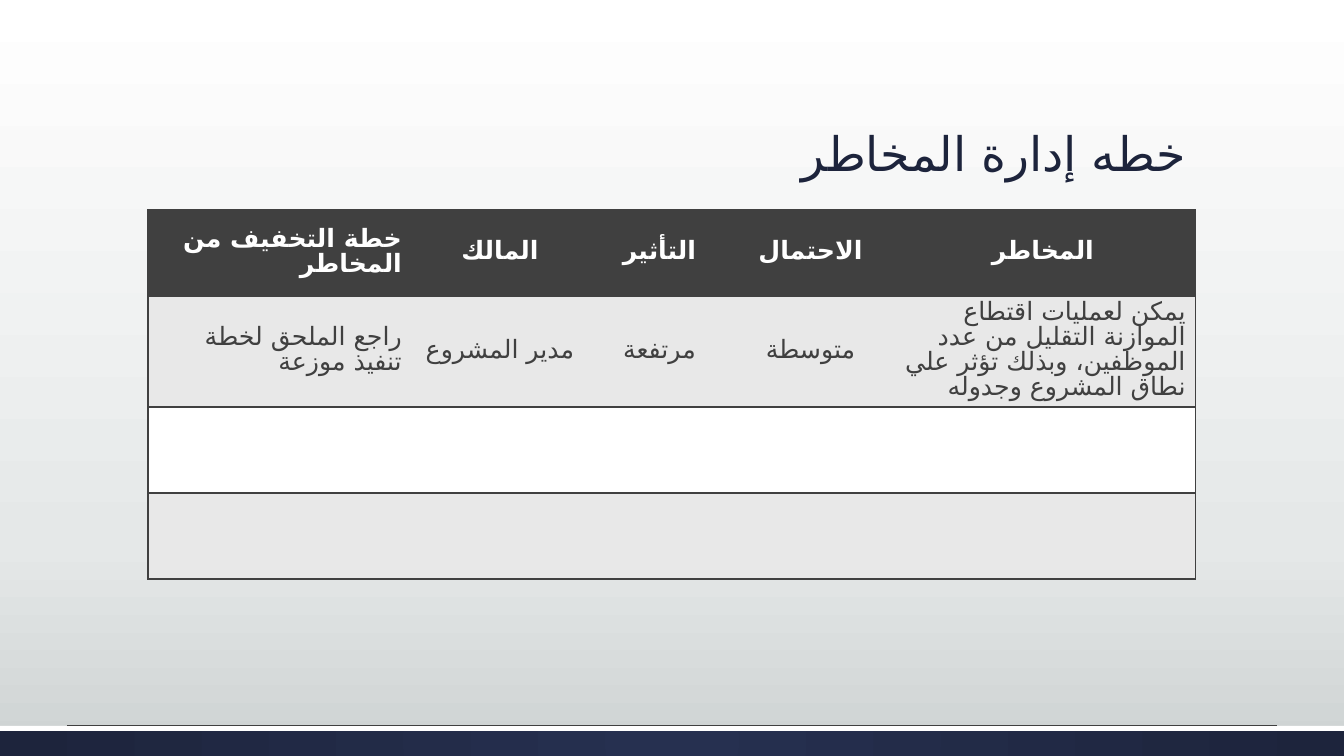
from pptx import Presentation
from pptx.dml.color import RGBColor
from pptx.enum.shapes import MSO_CONNECTOR, MSO_SHAPE
from pptx.enum.text import MSO_ANCHOR, MSO_AUTO_SIZE, PP_ALIGN
from pptx.oxml import parse_xml
from pptx.oxml.ns import nsdecls, qn
from pptx.util import Pt
from lxml.etree import SubElement

TITLE = "خطه إدارة المخاطر"
ROWS = [
    ["خطة التخفيف من المخاطر", "المالك", "التأثير", "الاحتمال", "المخاطر"],
    ["راجع الملحق لخطة تنفيذ موزعة", "مدير المشروع", "مرتفعة", "متوسطة",
     "يمكن لعمليات اقتطاع الموازنة التقليل من عدد الموظفين، وبذلك تؤثر علي نطاق المشروع وجدوله"],
    [""] * 5,
    [""] * 5,
]
COLS = [264, 176, 143, 159, 306]
ROW_H = 86
RIGHT = {(0, 0), (1, 0), (1, 4)}
FONT = "Lato"
ARABIC = "DejaVu Sans"
COLORS = {"navy": "1D243C", "blue": "263050", "dark": "404040", "band": "E8E8E8",
          "white": "FFFFFF", "mist": "E5E8E8", "gray": "CDD2D2"}
FILLS = ["dark", "band", "white", "band"]
BACK = [(0, "white"), (72, "mist"), (100, "gray")]
BAR = [(0, "blue"), (100, "navy")]
LINEAR = '<a:lin ang="5400000" scaled="0"/>'
RADIAL = ('<a:path path="circle"><a:fillToRect l="50000" t="50000" '
          'r="50000" b="50000"/></a:path>')


def px(n):
    return round(n * 914400 / 100.8)


def rgb(name):
    return RGBColor.from_string(COLORS[name])


def blend(owner, stops, shade):
    gs = "".join(f'<a:gs pos="{pos * 1000}"><a:srgbClr val="{COLORS[name]}"/></a:gs>'
                 for pos, name in stops)
    grad = parse_xml(f'<a:gradFill {nsdecls("a")} rotWithShape="1">'
                     f'<a:gsLst>{gs}</a:gsLst>{shade}</a:gradFill>')
    solid = next(owner.iter(qn("a:solidFill")))
    solid.getparent().replace(solid, grad)


def write(frame, text, align, size, color, space, bold=False):
    frame.text = text
    para = frame.paragraphs[0]
    para.alignment = align
    para.line_spacing = space
    para._p.get_or_add_pPr().set("rtl", "1")
    for run in para.runs:
        font = run.font
        font.name, font.size, font.bold = FONT, Pt(size), bold
        font.color.rgb = rgb(color)
        SubElement(font._element, qn("a:cs")).set("typeface", ARABIC)


def border(cell, sides):
    props = cell._tc.get_or_add_tcPr()
    for i, side in enumerate(sides):
        props.insert(i, parse_xml(
            f'<a:ln{side} {nsdecls("a")} w="12700"><a:solidFill>'
            f'<a:srgbClr val="{COLORS["dark"]}"/></a:solidFill></a:ln{side}>'))


def strip(shapes, top, height):
    shape = shapes.add_shape(MSO_SHAPE.RECTANGLE, 0, px(top), px(1344), px(height))
    shape.shadow.inherit = False
    shape.fill.solid()
    shape.fill.fore_color.rgb = rgb("white")
    shape.line.fill.background()
    return shape


def grid(shapes):
    table = shapes.add_table(len(ROWS), len(COLS), px(148), px(210),
                             px(sum(COLS)), px(ROW_H * len(ROWS))).table
    table._tbl.tblPr[0].text = "{2D5ABB26-0587-4C30-8999-92F81FD0307C}"
    for col, width in zip(table.columns, COLS):
        col.width = px(width)
    for r, texts in enumerate(ROWS):
        table.rows[r].height = px(ROW_H)
        for c, text in enumerate(texts):
            cell = table.cell(r, c)
            cell.vertical_anchor = MSO_ANCHOR.MIDDLE
            cell.fill.solid()
            cell.fill.fore_color.rgb = rgb(FILLS[r])
            align = PP_ALIGN.RIGHT if (r, c) in RIGHT else PP_ALIGN.CENTER
            write(cell.text_frame, text, align, 18, "dark" if r else "white",
                  Pt(18), r == 0)
            edge = {0: "L", len(COLS) - 1: "R"}.get(c, "")
            border(cell, edge + "TB")


def main():
    deck = Presentation()
    deck.slide_width, deck.slide_height = px(1344), px(756)
    slide = deck.slides.add_slide(deck.slide_layouts[5])
    shapes = slide.shapes
    slide.background.fill.solid()
    blend(slide._element, BACK, LINEAR)

    bar = strip(shapes, 726, 30)
    blend(bar._element, BAR, RADIAL)
    strip(shapes, 726, 5)
    rule = shapes.add_connector(MSO_CONNECTOR.STRAIGHT, px(67), px(725), px(1277), px(725))
    rule.line.color.rgb = rgb("dark")
    rule.line.width = Pt(0.5)
    SubElement(rule._element.spPr, qn("a:effectLst"))

    title = shapes.title
    title.left, title.top, title.width, title.height = map(px, (148, 51, 1048, 136))
    frame = title.text_frame
    frame.word_wrap = True
    frame.auto_size = MSO_AUTO_SIZE.NONE
    frame.vertical_anchor = MSO_ANCHOR.BOTTOM
    write(frame, TITLE, PP_ALIGN.RIGHT, 34, "navy", 0.9)

    grid(shapes)
    deck.save("out.pptx")


if __name__ == "__main__":
    main()
